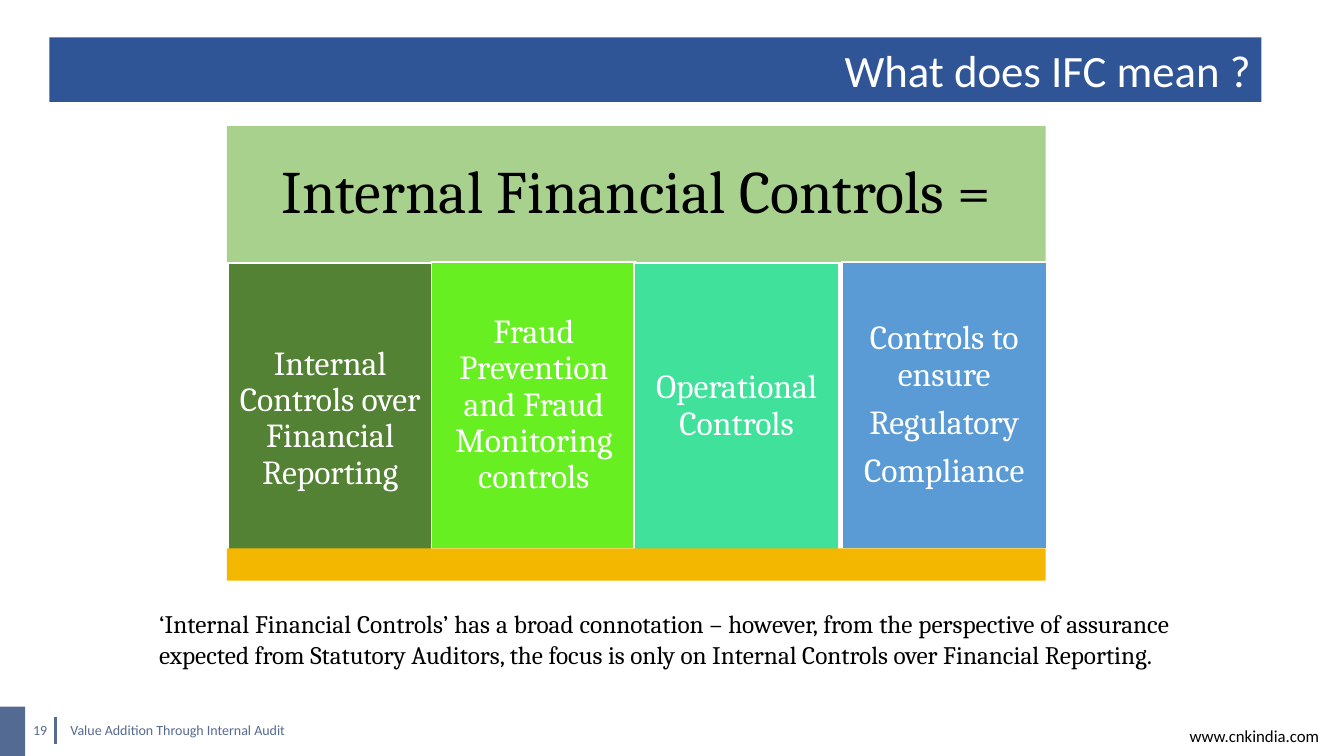
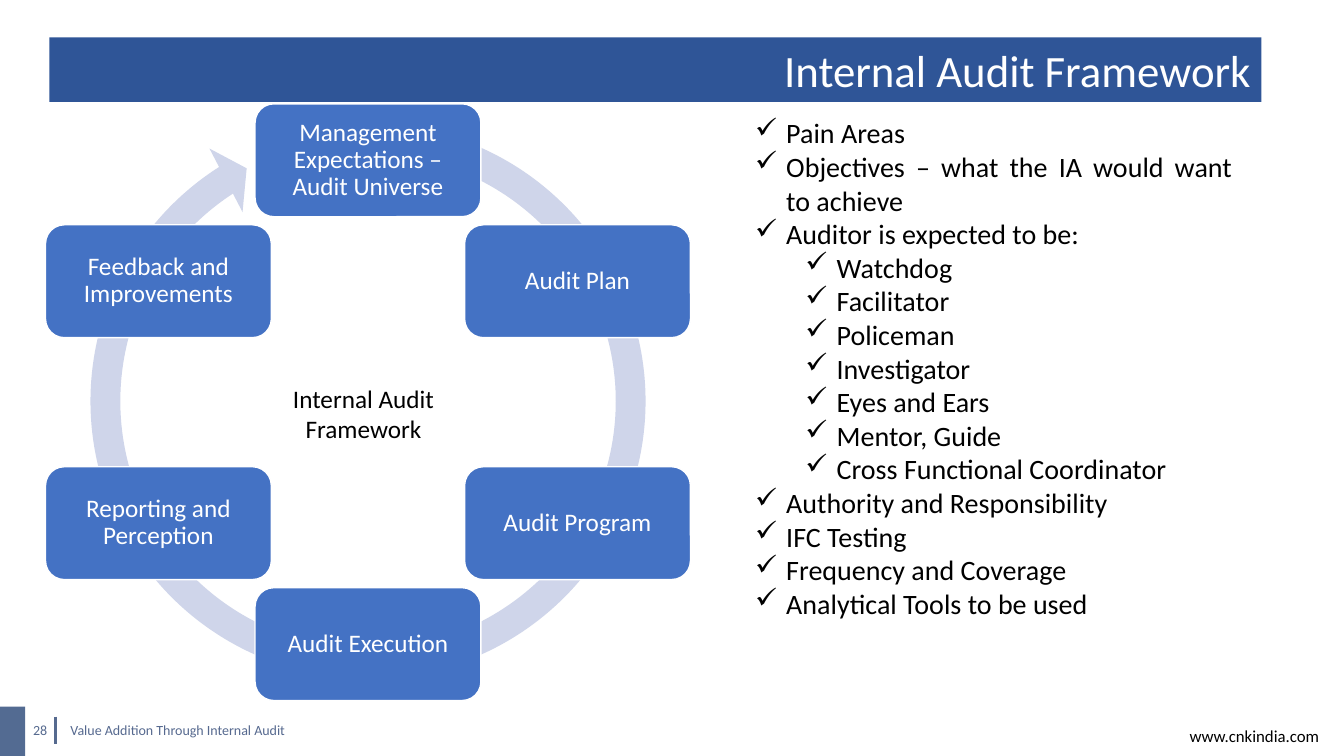
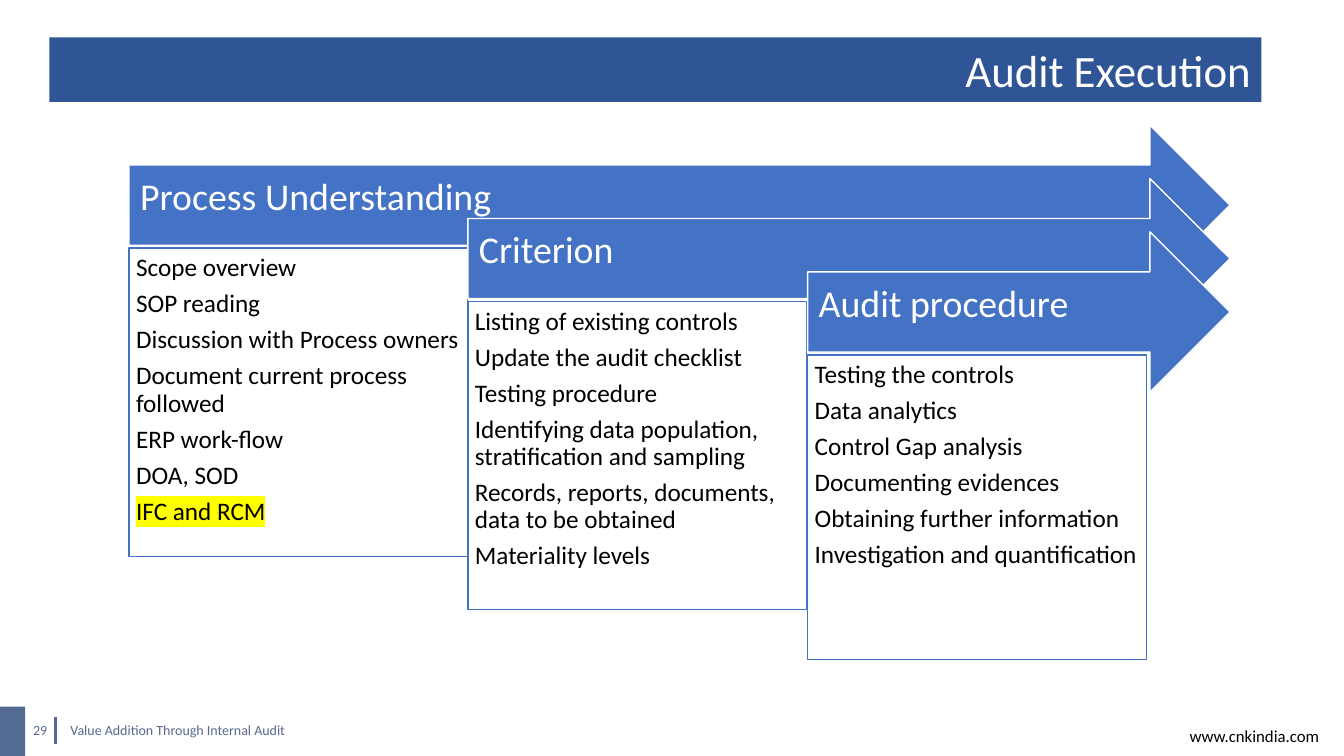
from dataclasses import dataclass
from math import cos, radians, sin

from pptx import Presentation
from pptx import util as u
from pptx.dml.color import RGBColor
from pptx.enum import shapes, text
from pptx.oxml import ns
from pptx.oxml.xmlchemy import OxmlElement

PX = 9144  # EMU per px, 100 px to the inch
SHAPE = shapes.MSO_SHAPE
ALIGN = text.PP_ALIGN
ANCHOR = text.MSO_ANCHOR


@dataclass(frozen=True)
class Theme:
    sans: str = "Calibri"
    serif: str = "Cambria"
    white: str = "FFFFFF"
    black: str = "000000"
    band: str = "2F5597"
    footer_block: str = "536B92"
    footer_rule: str = "566A8F"
    footer_text: str = "56698F"
    accent: str = "4472C4"
    ring: str = "CFD5EA"
    header: str = "A9D18E"
    base: str = "F4B700"
    marker: str = "FFFF00"
    title_size: int = 32
    heading_size: int = 43
    arrow_size: int = 27
    column_size: int = 24
    list_size: int = 20
    body_size: int = 18
    url_size: int = 12
    footer_size: int = 10


THEME = Theme()

# Content
FOOTER = "Value Addition Through Internal Audit"
URL = "www.cnkindia.com"

IFC_HEADING = "Internal Financial Controls ="
IFC_COLUMNS = [  # left, top, height, fill, paragraphs
    (226, 261, 309, "548235", ["Internal Controls over Financial Reporting"]),
    (428, 260, 284, "67EF21", ["Fraud Prevention and Fraud Monitoring controls"]),
    (629, 261, 284, "3FE19B", ["Operational Controls"]),
    (835, 260, 284, "5B9BD5", ["Controls to ensure", "Regulatory", "Compliance"]),
]
IFC_NOTE = (
    "‘Internal Financial Controls’ has a broad connotation – however, from the "
    "perspective of assurance expected from Statutory Auditors, the focus is only on "
    "Internal Controls over Financial Reporting."
)

CYCLE_CENTRE = "Internal Audit Framework"
CYCLE_STEPS = [
    "Management Expectations – Audit Universe",
    "Audit Plan",
    "Audit Program",
    "Audit Execution",
    "Reporting and Perception",
    "Feedback and Improvements",
]
FRAMEWORK_POINTS = [  # level, text
    (0, "Pain Areas"),
    (0, "Objectives – what the IA would want to achieve"),
    (0, "Auditor is expected to be:"),
    (1, "Watchdog"),
    (1, "Facilitator"),
    (1, "Policeman"),
    (1, "Investigator"),
    (1, "Eyes and Ears"),
    (1, "Mentor, Guide"),
    (1, "Cross Functional Coordinator"),
    (0, "Authority and Responsibility"),
    (0, "IFC Testing"),
    (0, "Frequency and Coverage"),
    (0, "Analytical Tools to be used"),
]

HIGHLIGHTED = "IFC and RCM"
STAGES = [  # left, list height, heading, points
    (128, 306, "Process Understanding", [
        "Scope overview", "SOP reading", "Discussion with Process owners",
        "Document current process followed", "ERP work-flow", "DOA, SOD", HIGHLIGHTED]),
    (464, 306, "Criterion", [
        "Listing of existing controls", "Update the audit checklist", "Testing procedure",
        "Identifying data population, stratification and sampling",
        "Records, reports, documents, data to be obtained", "Materiality levels"]),
    (801, 302, "Audit procedure", [
        "Testing the controls", "Data analytics", "Control Gap analysis",
        "Documenting evidences", "Obtaining further information",
        "Investigation and quantification"]),
]


# Helpers
def px(*lengths):
    return [u.Emu(round(length * PX)) for length in lengths]


def rgb(code):
    return RGBColor.from_string(code)


def write(shape, lines, size, color, font=THEME.sans, align=ALIGN.LEFT,
          anchor=ANCHOR.TOP, insets=(10, 5, 10, 5), tight=False):
    """Fill a shape with paragraphs; tight gives diagram line and paragraph spacing."""
    frame = shape.text_frame
    frame.text = "\n".join(lines)
    frame.word_wrap = True
    frame.auto_size = text.MSO_AUTO_SIZE.NONE
    frame.vertical_anchor = anchor
    (frame.margin_left, frame.margin_top,
     frame.margin_right, frame.margin_bottom) = px(*insets)
    for para in frame.paragraphs:
        para.alignment = align
        if tight:
            para.line_spacing = 0.9
            para.space_after = u.Pt(size * 0.35)
        for span in para.runs:
            span.font.size = u.Pt(size)
            span.font.name = font
            span.font.color.rgb = rgb(color)
    return frame


def add_box(page, area, fill, line=None, kind=SHAPE.RECTANGLE):
    box = page.shapes.add_shape(kind, *px(*area))
    box.shadow.inherit = False
    box.fill.solid()
    box.fill.fore_color.rgb = rgb(fill)
    if line:
        box.line.color.rgb = rgb(line)
        box.line.width = u.Pt(1)
    else:
        box.line.fill.background()
    return box


def add_text(page, area, lines, size, color, **style):
    return write(page.shapes.add_textbox(*px(*area)), lines, size, color, **style)


def add_check(para, level):
    para.level = level
    props = para._p.get_or_add_pPr()
    indent, margin = px(31, 31 + 50 * level)
    props.set("marL", str(margin))
    props.set("indent", str(-indent))
    bullet = OxmlElement("a:buChar")
    bullet.set("char", "✓")
    props.append(bullet)


def highlight(span, color):
    mark = OxmlElement("a:highlight")
    value = OxmlElement("a:srgbClr")
    value.set("val", color)
    mark.append(value)
    span._r.get_or_add_rPr().find(ns.qn("a:latin")).addprevious(mark)


def add_page(deck, title, number):
    """Title band and footer shared by every slide."""
    page = deck.slides.add_slide(deck.slide_layouts[5])
    band = page.shapes.title
    band.left, band.top, band.width, band.height = px(49, 37, 1202, 64)
    band.fill.solid()
    band.fill.fore_color.rgb = rgb(THEME.band)
    write(band, [title], THEME.title_size, THEME.white, align=ALIGN.RIGHT,
          anchor=ANCHOR.MIDDLE)

    add_box(page, (0, 701, 25, 49), THEME.footer_block)
    add_text(page, (23, 704, 41, 40), [str(number)], THEME.footer_size,
             THEME.footer_rule, anchor=ANCHOR.MIDDLE)
    rule = page.shapes.add_connector(shapes.MSO_CONNECTOR.STRAIGHT,
                                     *px(55, 711, 55, 738))
    rule.line.color.rgb = rgb(THEME.footer_rule)
    rule.line.width = u.Pt(1.75)
    rule._element.spPr.append(OxmlElement("a:effectLst"))
    add_text(page, (60, 711, 272, 44), [FOOTER], THEME.footer_size, THEME.footer_text)
    add_text(page, (1170, 715, 160, 30), [URL], THEME.url_size, THEME.black)
    return page


# Slides
def build_meaning(deck):
    page = add_page(deck, "What does IFC mean ?", 19)
    centred = dict(font=THEME.serif, align=ALIGN.CENTER, anchor=ANCHOR.MIDDLE, tight=True)
    header = add_box(page, (225, 125, 812, 135), THEME.header)
    write(header, [IFC_HEADING], THEME.heading_size, THEME.black,
          insets=(18,) * 4, **centred)
    for left, top, height, fill, lines in IFC_COLUMNS:
        column = add_box(page, (left, top, 203, height), fill, THEME.white)
        write(column, lines, THEME.column_size, THEME.white, insets=(10,) * 4, **centred)
    add_box(page, (225, 544, 812, 32), THEME.base)
    add_text(page, (148, 599, 1022, 101), [IFC_NOTE], THEME.body_size, THEME.black,
             font=THEME.serif, align=ALIGN.JUSTIFY)


def build_framework(deck):
    page = add_page(deck, "Internal Audit Framework", 28)

    # Checklist
    frame = add_text(page, (739, 110, 493, 576), [line for _, line in FRAMEWORK_POINTS],
                     THEME.list_size, THEME.black, align=ALIGN.JUSTIFY)
    for para, (level, _) in zip(frame.paragraphs, FRAMEWORK_POINTS):
        add_check(para, level)

    # Cycle: steps at equal angles, clockwise from the top
    ring = add_box(page, (69, 102, 592, 592), THEME.ring, kind=SHAPE.CIRCULAR_ARROW)
    for index, value in enumerate((0.05, 3.13, 142.36, 171.23, 0.06)):
        ring.adjustments[index] = value
    centre_x, centre_y, radius = 365, 399, 240
    width, height = 224, 112
    for index, label in enumerate(CYCLE_STEPS):
        angle = radians(360 / len(CYCLE_STEPS) * index)
        left = centre_x + radius * sin(angle) - width / 2
        top = centre_y - radius * cos(angle) - height / 2
        step = add_box(page, (left, top, width, height), THEME.accent, THEME.white,
                       SHAPE.ROUNDED_RECTANGLE)
        write(step, [label], THEME.body_size, THEME.white, align=ALIGN.CENTER,
              anchor=ANCHOR.MIDDLE, insets=(7,) * 4, tight=True)
    add_text(page, (259, 375, 203, 71), [CYCLE_CENTRE], THEME.body_size, THEME.black,
             align=ALIGN.CENTER)


def build_execution(deck):
    page = add_page(deck, "Audit Execution", 29)
    right_edge, first_top, drop = 1220, 124, 53
    for index, (left, height, heading, points) in enumerate(STAGES):
        top = first_top + drop * index
        arrow = add_box(page, (left, top, right_edge - left, 159), THEME.accent,
                        THEME.white, SHAPE.RIGHT_ARROW)
        write(arrow, [heading], THEME.arrow_size, THEME.white, anchor=ANCHOR.MIDDLE,
              insets=(11, 11, 28, 25), tight=True)
        panel = add_box(page, (left, top + 122, 336, height), THEME.white, THEME.accent)
        frame = write(panel, points, THEME.body_size, THEME.black, insets=(7,) * 4,
                      tight=True)
        for para in frame.paragraphs:
            if para.text == HIGHLIGHTED:
                highlight(para.runs[0], THEME.marker)


def main():
    deck = Presentation()
    deck.slide_width, deck.slide_height = px(1333, 750)
    build_meaning(deck)
    build_framework(deck)
    build_execution(deck)
    deck.save("out.pptx")


if __name__ == "__main__":
    main()
